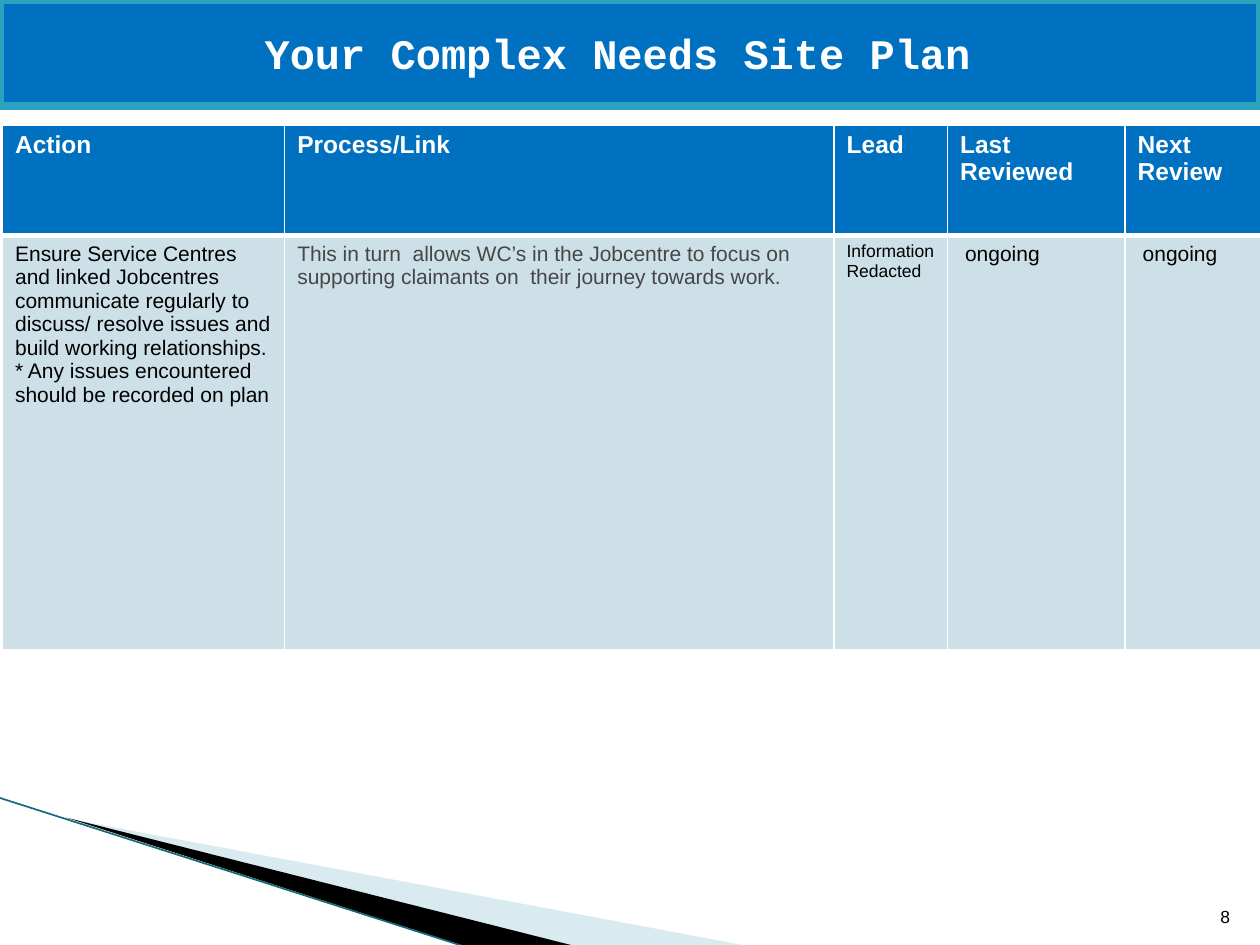
from lxml import etree
from pptx import Presentation
from pptx import util as u
from pptx.dml import color
from pptx.enum import text
from pptx.oxml import ns

HEADINGS = ["Action", "Process/Link", "Lead", "Last Reviewed", "Next Review"]
WIDTHS = [22.4, 43.6, 9, 14.1, 10.8]
ACTION = [
    "Ensure Service Centres and linked Jobcentres communicate regularly to "
    "discuss/ resolve issues and build working relationships.",
    "* Any issues encountered should be recorded on plan",
]
PROCESS = [
    "This in turn  allows WC’s in the Jobcentre to focus on "
    "supporting claimants on  their journey towards work."
]
REVIEW = dict(lines=["ongoing"], indent=1.4)
ENTRIES = [
    dict(lines=ACTION),
    dict(lines=PROCESS, ink="464646"),
    dict(lines=["Information Redacted"], size=10),
    REVIEW,
    REVIEW,
]


def rgb(code):
    return color.RGBColor.from_string(code)


def paint(target, code):
    target.fill.solid()
    target.fill.fore_color.rgb = rgb(code)


def write(frame, lines, size=12, ink="000000", face="Arial", bold=False, align="LEFT"):
    frame.word_wrap = True
    for index, line in enumerate(lines):
        paragraph = frame.add_paragraph() if index else frame.paragraphs[0]
        paragraph.text = line
        paragraph.alignment = getattr(text.PP_ALIGN, align)
        font = paragraph.font
        font.size, font.name, font.bold = u.Pt(size), face, bold
        font.color.rgb = rgb(ink)


class SitePlan:
    """Holds the plan's colours, its 100 by 75 grid and the current slide."""

    blue, pale, edge, white = "0070C0", "CDE0E8", "2DA2BF", "FFFFFF"

    def __init__(self, deck):
        self.column = deck.slide_width / 100
        self.row = deck.slide_height / 75
        self.slide = deck.slides.add_slide(deck.slide_layouts[5])
        self.shapes = self.slide.shapes

    def point(self, across, down):
        return round(across * self.column), round(down * self.row)

    def box(self, left, top, width, height):
        return *self.point(left, top), *self.point(width, height)

    def title(self, wording, *area):
        banner = self.shapes.title
        banner.left, banner.top, banner.width, banner.height = self.box(*area)
        paint(banner, self.blue)
        banner.line.color.rgb = rgb(self.edge)
        banner.line.width = u.Pt(4.33)
        frame = banner.text_frame
        frame.auto_size = text.MSO_AUTO_SIZE.NONE
        frame.vertical_anchor = text.MSO_ANCHOR.MIDDLE
        write(frame, [wording], size=24, ink=self.white, face="Courier New",
              bold=True, align="CENTER")

    def wedge(self, corners, code, opacity=100):
        first, *rest = [self.point(*corner) for corner in corners]
        builder = self.shapes.build_freeform(*first)
        builder.add_line_segments(rest)
        sliver = builder.convert_to_shape()
        sliver.shadow.inherit = False
        paint(sliver, code)
        sliver.line.fill.background()
        if opacity < 100:
            tint = sliver.fill._xPr.find(".//" + ns.qn("a:srgbClr"))
            etree.SubElement(tint, ns.qn("a:alpha"), val=str(opacity * 1000))

    def stroke(self, start, end, code, weight):
        rule = self.shapes.add_connector(1, *self.point(*start), *self.point(*end))
        rule.line.color.rgb = rgb(code)
        rule.line.width = u.Pt(weight)
        etree.SubElement(rule._element.spPr, ns.qn("a:effectLst"))

    def borders(self, cell, top, bottom):
        properties = cell._tc.get_or_add_tcPr()
        for place, (side, weight) in enumerate(
                zip("LRTB", (1, 1, top, bottom))):
            line = etree.Element(ns.qn(f"a:ln{side}"), w=str(u.Pt(weight)))
            fill = etree.SubElement(line, ns.qn("a:solidFill"))
            etree.SubElement(fill, ns.qn("a:srgbClr"), val=self.white)
            properties.insert(place, line)

    def cell(self, cell, code, top, bottom, lines, indent=1, **style):
        paint(cell, code)
        cell.margin_left = round(indent * self.column)
        write(cell.text_frame, lines, **style)
        self.borders(cell, top, bottom)

    def table(self, left, top, heights):
        area = self.box(left, top, sum(WIDTHS), sum(heights))
        plan = self.shapes.add_table(2, len(WIDTHS), *area).table
        for row, height in zip(plan.rows, heights):
            row.height = round(height * self.row)
        for index, (width, heading, entry) in enumerate(zip(WIDTHS, HEADINGS, ENTRIES)):
            plan.columns[index].width = round(width * self.column)
            self.cell(plan.cell(0, index), self.blue, 1, 3, [heading],
                      size=14, ink=self.white, bold=True)
            self.cell(plan.cell(1, index), self.pale, 3, 1, **entry)

    def page_number(self, number, *area):
        frame = self.shapes.add_textbox(*self.box(*area)).text_frame
        frame.vertical_anchor = text.MSO_ANCHOR.BOTTOM
        write(frame, [number], size=10, align="RIGHT")


def main():
    deck = Presentation()
    deck.slide_width, deck.slide_height = u.Inches(10), u.Inches(7.5)
    plan = SitePlan(deck)
    plan.wedge([(5.5, 65), (59.5, 75.1), (45.6, 75.1)], "A0CBDC", opacity=40)
    plan.wedge([(5.3, 64.9), (45.7, 75.1), (37.2, 75.2)], "000000")
    plan.stroke((-0.1, 63.3), (37.1, 75.2), "17697B", 0.95)
    plan.table(0.2, 9.9, [8.8, 32.9])
    plan.page_number("8", 94.6, 70.1, 4, 4)
    plan.title("Your Complex Needs Site Plan ", 0, 0, 100, 8.4)
    deck.save("out.pptx")


if __name__ == "__main__":
    main()
